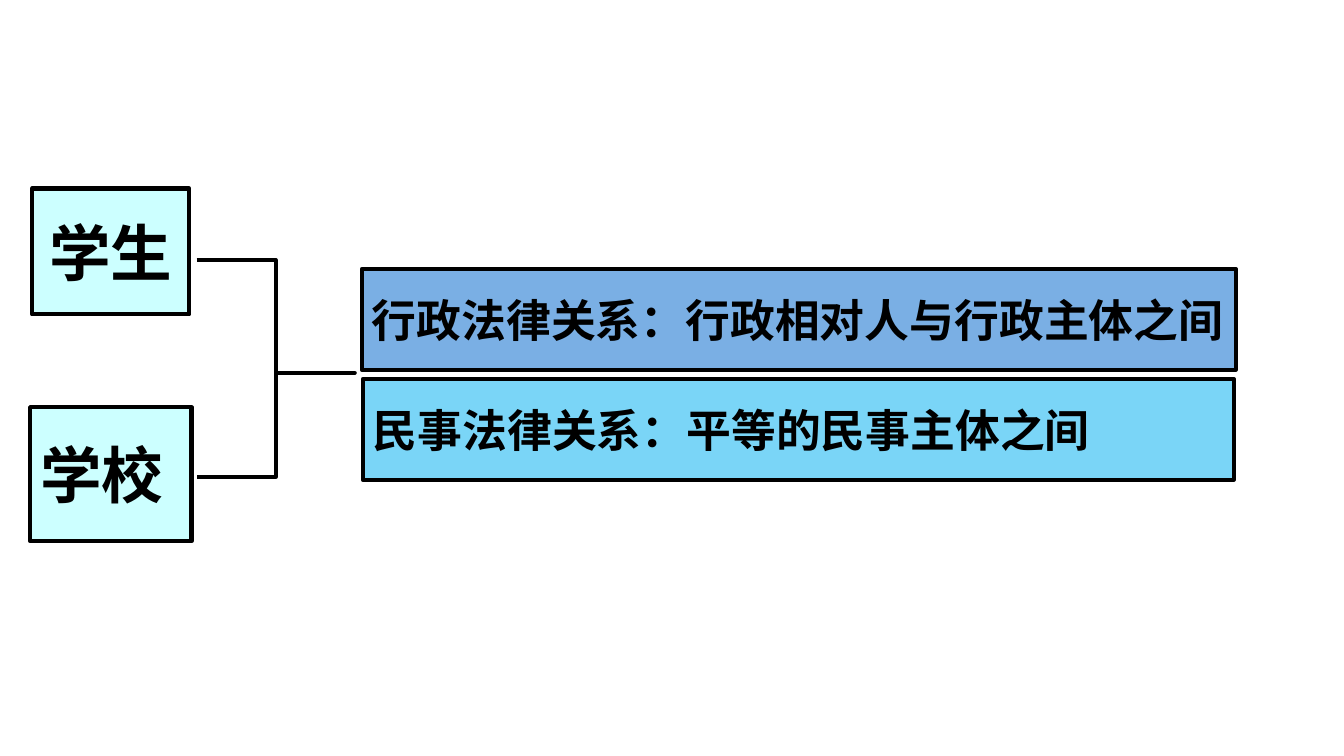
from lxml import etree
from pptx import Presentation
from pptx.dml.color import RGBColor
from pptx.enum.shapes import MSO_SHAPE
from pptx.enum.text import MSO_ANCHOR, PP_ALIGN
from pptx.oxml.ns import qn
from pptx.util import Pt

RECTANGLE = MSO_SHAPE.RECTANGLE
RIGHT_BRACE = MSO_SHAPE.RIGHT_BRACE
MIDDLE = MSO_ANCHOR.MIDDLE
LEFT, CENTER = PP_ALIGN.LEFT, PP_ALIGN.CENTER

FONT = "Noto Sans CJK SC"
COLORS = {
    "ink": "000000",
    "party": "CCFFFF",
    "administrative": "0066CC",
    "civil": "00B0F0",
}


def add_outlined(kind, left, top, width, height):
    outlined = slide.shapes.add_shape(kind, Pt(left), Pt(top), Pt(width), Pt(height))
    outlined.shadow.inherit = False
    outlined.line.color.rgb = RGBColor.from_string(COLORS["ink"])
    outlined.line.width = Pt(3)
    return outlined


def add_label_box(text, bounds, color, opacity, size, align):
    box = add_outlined(RECTANGLE, *bounds)
    box.fill.solid()
    box.fill.fore_color.rgb = RGBColor.from_string(COLORS[color])
    if opacity < 100:
        tint = box.fill._xPr.find(qn("a:solidFill"))[0]
        etree.SubElement(tint, qn("a:alpha"), val=str(opacity * 1000))

    frame = box.text_frame
    frame.text = text
    frame.word_wrap = False
    frame.vertical_anchor = MIDDLE
    frame.paragraphs[0].alignment = align
    run = frame.paragraphs[0].runs[0]
    run.font.size = Pt(size)
    run.font.bold = True
    run.font.color.rgb = RGBColor.from_string(COLORS["ink"])
    run.font.name = FONT
    etree.SubElement(run.font._element, qn("a:ea"), typeface=FONT)


presentation = Presentation()
presentation.slide_width = Pt(960)
presentation.slide_height = Pt(540)
slide = presentation.slides.add_slide(presentation.slide_layouts[6])

# The two parties
for party, bounds, align in [
    ("学生", (23, 134.6, 112.3, 90), CENTER),
    ("学校", (21.6, 290.9, 115.2, 95.8), LEFT),
]:
    add_label_box(party, bounds, "party", 100, 44, align)

# Square brace joining the parties
brace = add_outlined(RIGHT_BRACE, 140.4, 185.8, 113, 154.8)
brace.fill.background()
brace.adjustments[0] = 0
brace.adjustments[1] = 0.52

# The legal relations between them
for relation, bounds, color in [
    ("行政法律关系：行政相对人与行政主体之间", (258.5, 192.2, 624.2, 72), "administrative"),
    ("民事法律关系：平等的民事主体之间", (259.2, 270.7, 622.1, 72), "civil"),
]:
    add_label_box(relation, bounds, color, 52, 32, LEFT)

presentation.save("out.pptx")
